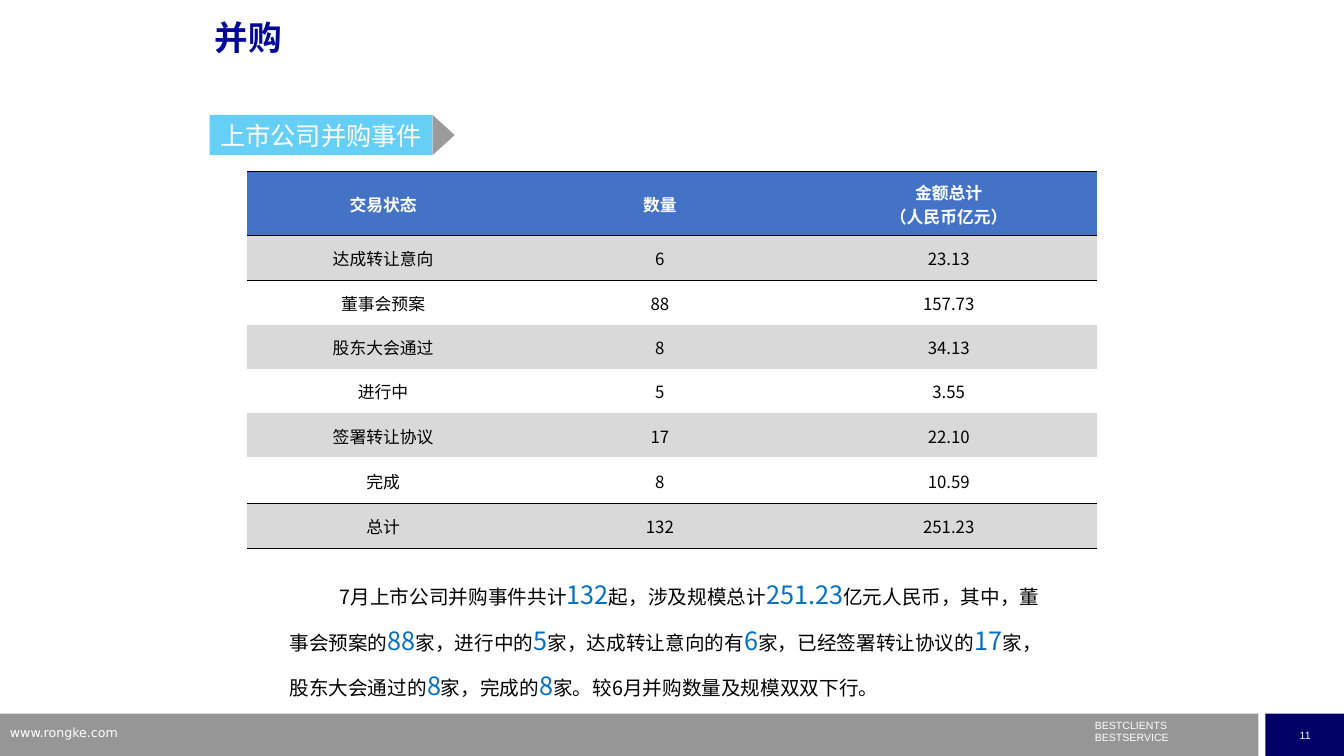
from dataclasses import dataclass

from lxml import etree
from pptx import Presentation
from pptx.dml.color import RGBColor
from pptx.enum.shapes import MSO_SHAPE
from pptx.enum.text import MSO_ANCHOR, PP_ALIGN
from pptx.oxml.ns import qn
from pptx.util import Inches, Pt

RECTANGLE, TRIANGLE = MSO_SHAPE.RECTANGLE, MSO_SHAPE.ISOSCELES_TRIANGLE
TOP, MIDDLE = MSO_ANCHOR.TOP, MSO_ANCHOR.MIDDLE
LEFT, CENTER = PP_ALIGN.LEFT, PP_ALIGN.CENTER

TITLE = "并购"
SECTION = "上市公司并购事件"
HEADER = ("交易状态", "数量", "金额总计\n（人民币亿元）")
DEALS = [
    ("达成转让意向", "6", "23.13"),
    ("董事会预案", "88", "157.73"),
    ("股东大会通过", "8", "34.13"),
    ("进行中", "5", "3.55"),
    ("签署转让协议", "17", "22.10"),
    ("完成", "8", "10.59"),
]
TOTAL = ("总计", "132", "251.23")
# Plain wording and highlighted figures take turns.
SUMMARY = [
    "7月上市公司并购事件共计", "132", "起，涉及规模总计", "251.23",
    "亿元人民币，其中，董事会预案的", "88", "家，进行中的", "5",
    "家，达成转让意向的有", "6", "家，已经签署转让协议的", "17",
    "家，股东大会通过的", "8", "家，完成的", "8",
    "家。较6月并购数量及规模双双下行。",
]
WEBSITE = "www.rongke.com"
SLOGAN = ("BESTCLIENTS", "BESTSERVICE")
PAGE_NUMBER = "11"
COLUMN_WIDTHS = (2.7, 2.79, 2.94)
ROW_HEIGHTS = (0.64, *[0.44] * 5, 0.46, 0.44)
NO_GRID_STYLE = "{2D5ABB26-0587-4C30-8999-92F81FD0307C}"


@dataclass(frozen=True)
class Theme:
    cjk: str = "Noto Sans CJK SC"
    latin: str = "Arial"
    web: str = "DejaVu Sans"
    white: str = "FFFFFF"
    black: str = "000000"
    title: str = "000798"
    tag: str = "00B0F0"
    tag_tip: str = "595959"
    header: str = "4472C4"
    band: str = "D9D9D9"
    figure: str = "0070C0"
    footer: str = "969696"
    page: str = "000066"
    title_size: float = 24
    large_size: float = 18
    body_size: float = 14
    table_size: float = 12
    web_size: float = 9
    small_size: float = 7.5


THEME = Theme()


def style_span(span, size, color, font=THEME.cjk, bold=False):
    span.font.size, span.font.bold, span.font.name = Pt(size), bold, font
    span.font.color.rgb = RGBColor.from_string(color)
    east_asian = etree.Element(qn("a:ea"), typeface=THEME.cjk)
    span.font._element.find(qn("a:latin")).addnext(east_asian)


def write(para, text, align, *style, **options):
    para.text = text
    para.alignment = align
    for span in para.runs:
        style_span(span, *style, **options)


def add_block(shapes, kind, place, color, opacity=None):
    block = shapes.add_shape(kind, *map(Inches, place))
    block.shadow.inherit = False
    block.fill.solid()
    block.fill.fore_color.rgb = RGBColor.from_string(color)
    block.line.fill.background()
    if opacity:
        tone = block.fill._xPr.find(qn("a:solidFill"))[0]
        etree.SubElement(tone, qn("a:alpha"), val=str(opacity * 1000))
    block.text_frame.vertical_anchor = MIDDLE
    return block


def add_text(page, place):
    frame = page.shapes.add_textbox(*map(Inches, place)).text_frame
    frame.word_wrap = True
    return frame


def add_rule(cell, side):
    """Draw a black line on side "T" or "B"; rules must precede the fill."""
    props = cell._tc.get_or_add_tcPr()
    rule = etree.Element(qn(f"a:ln{side}"), w=str(Pt(1)))
    fill = etree.SubElement(rule, qn("a:solidFill"))
    etree.SubElement(fill, qn("a:srgbClr"), val=THEME.black)
    props.insert(len(props.findall(qn("a:lnT"))), rule)


def add_footer(page):
    add_block(page.shapes, RECTANGLE, (0, 7.08, 12.48, 0.42), THEME.footer)
    number = add_block(page.shapes, RECTANGLE, (12.55, 7.08, 0.79, 0.42), THEME.page)
    small = (THEME.small_size, THEME.white, THEME.latin)
    write(number.text_frame.paragraphs[0], PAGE_NUMBER, CENTER, *small)

    slogan = add_text(page, (10.76, 7.14, 2, 0.3))
    slogan.text = "\n".join(SLOGAN)
    for index, para in enumerate(slogan.paragraphs):
        write(para, SLOGAN[index], LEFT, *small)
        para.line_spacing = 0.5
        para.space_before = Pt(3.75 if index else 0)

    website = add_text(page, (0, 7.14, 3.2, 0.26))
    write(website.paragraphs[0], WEBSITE, LEFT, THEME.web_size, THEME.white, THEME.web)


def add_section_tag(page):
    group = page.shapes.add_group_shape()
    tag = add_block(group.shapes, RECTANGLE, (2.08, 1.14, 2.21, 0.4), THEME.tag, 60)
    tag.text_frame.margin_left = tag.text_frame.margin_right = 0
    write(tag.text_frame.paragraphs[0], SECTION, CENTER, THEME.large_size, THEME.white)
    tip = add_block(group.shapes, TRIANGLE, (4.2, 1.23, 0.4, 0.22), THEME.tag_tip, 60)
    tip.rotation = 90


def add_deal_table(page):
    rows = [HEADER, *DEALS, TOTAL]
    last = len(rows) - 1
    frame = page.shapes.add_table(
        len(rows), len(HEADER), Inches(2.45), Inches(1.7),
        Inches(sum(COLUMN_WIDTHS)), Inches(sum(ROW_HEIGHTS)))
    table = frame.table
    table._tbl.tblPr.find(qn("a:tableStyleId")).text = NO_GRID_STYLE
    for column, width in zip(table.columns, COLUMN_WIDTHS):
        column.width = Inches(width)
    for index, (row, height, texts) in enumerate(zip(table.rows, ROW_HEIGHTS, rows)):
        row.height = Inches(height)
        is_header = index == 0
        for cell, text in zip(row.cells, texts):
            cell.margin_left = cell.margin_right = cell.margin_top = Inches(0.01)
            cell.margin_bottom = 0
            cell.vertical_anchor = MIDDLE
            write(cell.text_frame.paragraphs[0], text, CENTER, THEME.table_size,
                  THEME.white if is_header else THEME.black, bold=is_header)
            if is_header or index % 2:
                cell.fill.solid()
                color = THEME.header if is_header else THEME.band
                cell.fill.fore_color.rgb = RGBColor.from_string(color)
            else:
                cell.fill.background()
            if index in (0, 1, last):
                add_rule(cell, "T")
            if index in (0, last - 1, last):
                add_rule(cell, "B")


def add_summary(page):
    frame = add_text(page, (2.87, 5.6, 7.58, 1.31))
    frame.margin_left = frame.margin_right = frame.margin_top = frame.margin_bottom = 0
    para = frame.paragraphs[0]
    para.line_spacing = 1.5
    para._p.get_or_add_pPr().set("indent", str(Inches(0.5)))
    for index, text in enumerate(SUMMARY):
        span = para.add_run()
        span.text = text
        if index % 2:
            style_span(span, THEME.large_size, THEME.figure)
        else:
            style_span(span, THEME.body_size, THEME.black)


def main():
    deck = Presentation()
    deck.slide_width, deck.slide_height = Inches(13.33), Inches(7.5)
    page = deck.slides.add_slide(deck.slide_layouts[5])
    add_footer(page)
    add_section_tag(page)

    title = page.shapes.title
    title.left, title.top, title.width, title.height = map(Inches, (2.03, 0.16, 9, 0.7))
    title.text_frame.vertical_anchor = TOP
    heading = title.text_frame.paragraphs[0]
    write(heading, TITLE, LEFT, THEME.title_size, THEME.title, THEME.latin, bold=True)
    heading.line_spacing = 0.9

    add_summary(page)
    add_deal_table(page)
    deck.save("out.pptx")


if __name__ == "__main__":
    main()
